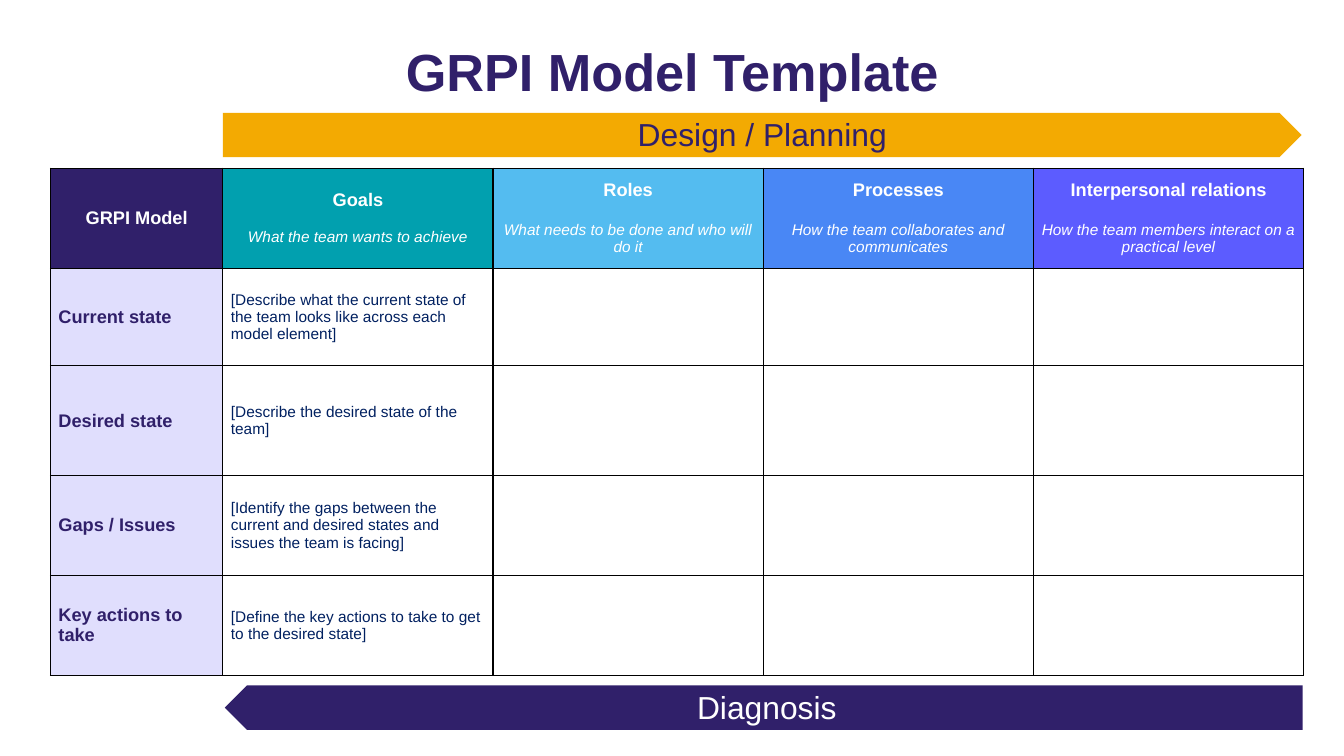
from lxml import etree
from pptx import Presentation
from pptx.dml.color import RGBColor
from pptx.enum import shapes, text
from pptx.oxml import ns
from pptx.util import Pt

PX = 9144  # 100 px to the inch
FONT = "Arial"
INDIGO = RGBColor(0x30, 0x20, 0x6A)
TEAL = RGBColor(0x01, 0xA0, 0xAF)
SKY = RGBColor(0x54, 0xBC, 0xF0)
BLUE = RGBColor(0x49, 0x87, 0xF5)
VIOLET = RGBColor(0x5C, 0x5C, 0xFF)
LAVENDER = RGBColor(0xE0, 0xDE, 0xFD)
NAVY = RGBColor(0x00, 0x20, 0x60)
AMBER = RGBColor(0xF3, 0xAA, 0x02)
WHITE = RGBColor(0xFF, 0xFF, 0xFF)

LABEL_WIDTH, ELEMENT_WIDTH = 171, 268
ROW_HEIGHTS = [99, 97, 109, 99, 99]
# name, question, fill, points between the two
ELEMENTS = [
    ("Goals", "What the team wants to achieve", TEAL, 13),
    ("Roles", "What needs to be done and who will do it", SKY, 15),
    ("Processes", "How the team collaborates and communicates", BLUE, 15),
    ("Interpersonal relations",
     "How the team members interact on a practical level", VIOLET, 15),
]
STAGES = [
    ("Current state", "[Describe what the current state of the team looks "
     "like across each model element]"),
    ("Desired state", "[Describe the desired state of the team]"),
    ("Gaps / Issues", "[Identify the gaps between the current and desired "
     "states and issues the team is facing]"),
    ("Key actions to take",
     "[Define the key actions to take to get to the desired state]"),
]


def px(*lengths):
    return [length * PX for length in lengths]


def write(para, words, size, color, bold=False, italic=False,
          align=text.PP_ALIGN.CENTER, before=0):
    para.alignment = align
    para.space_before = Pt(before)
    span = para.add_run()
    span.text = words
    font = span.font
    font.name, font.size, font.bold, font.italic = FONT, Pt(size), bold, italic
    font.color.rgb = color


def prepare_frame(frame):
    frame.word_wrap = True
    frame.auto_size = text.MSO_AUTO_SIZE.NONE
    frame.vertical_anchor = text.MSO_ANCHOR.MIDDLE
    frame.margin_left = frame.margin_right = 13 * PX
    frame.margin_top = frame.margin_bottom = 13 * PX


def add_title(page, left, top, width, height):
    title = page.shapes.title
    title.left, title.top, title.width, title.height = px(left, top, width, height)
    prepare_frame(title.text_frame)
    write(title.text_frame.paragraphs[0], "GRPI Model Template", 37.3, INDIGO, bold=True)


def add_banner(page, words, fill, color, left, top, width, height,
               rotation=0, shift=0):
    """Arrow bar with an upright caption, whose centre is moved by shift."""
    bar = page.shapes.add_shape(shapes.MSO_SHAPE.PENTAGON,
                                *px(left, top, width, height))
    bar.rotation = rotation
    bar.shadow.inherit = False
    bar.fill.solid()
    bar.fill.fore_color.rgb = fill
    bar.line.fill.background()
    caption = page.shapes.add_textbox(*px(left + shift, top - 1, width, height))
    prepare_frame(caption.text_frame)
    write(caption.text_frame.paragraphs[0], words, 22.7, color)


def add_borders(cell):
    properties = cell._tc.get_or_add_tcPr()
    for index, side in enumerate(("lnL", "lnR", "lnT", "lnB")):
        line = etree.Element(ns.qn(f"a:{side}"), w=str(Pt(1)))
        fill = etree.SubElement(line, ns.qn("a:solidFill"))
        etree.SubElement(fill, ns.qn("a:srgbClr"), val="000000")
        properties.insert(index, line)


def paint(cell, color):
    cell.fill.solid()
    cell.fill.fore_color.rgb = color


def add_matrix(page, left, top):
    widths = [LABEL_WIDTH] + [ELEMENT_WIDTH] * len(ELEMENTS)
    table = page.shapes.add_table(
        len(ROW_HEIGHTS), len(widths),
        *px(left, top, sum(widths), sum(ROW_HEIGHTS))).table
    table.first_row = table.horz_banding = False
    for column, width in zip(table.columns, widths):
        column.width = width * PX
    for row, height in zip(table.rows, ROW_HEIGHTS):
        row.height = height * PX
    for cell in table.iter_cells():
        cell.vertical_anchor = text.MSO_ANCHOR.MIDDLE
        cell.margin_left = cell.margin_right = 8 * PX
        cell.margin_top = cell.margin_bottom = 4 * PX
        cell.fill.background()
        add_borders(cell)

    corner = table.cell(0, 0)
    paint(corner, INDIGO)
    write(corner.text_frame.paragraphs[0], "GRPI Model", 13, WHITE, bold=True)
    for column, (name, question, color, gap) in enumerate(ELEMENTS, 1):
        cell = table.cell(0, column)
        paint(cell, color)
        write(cell.text_frame.paragraphs[0], name, 13, WHITE, bold=True)
        write(cell.text_frame.add_paragraph(), question, 11, WHITE,
              italic=True, before=gap)
    for row, (stage, prompt) in enumerate(STAGES, 1):
        label, answer = table.cell(row, 0), table.cell(row, 1)
        paint(label, LAVENDER)
        write(label.text_frame.paragraphs[0], stage, 13, INDIGO, bold=True,
              align=text.PP_ALIGN.LEFT)
        write(answer.text_frame.paragraphs[0], prompt, 11, NAVY,
              align=text.PP_ALIGN.LEFT)


def main():
    deck = Presentation()
    deck.slide_width, deck.slide_height = px(1333, 750)
    page = deck.slides.add_slide(deck.slide_layouts[5])
    add_matrix(page, 50, 167)
    add_title(page, 104, 35, 1126, 70)
    add_banner(page, "Design / Planning", AMBER, INDIGO, 221, 112, 1070, 44)
    add_banner(page, "Diagnosis", INDIGO, WHITE, 223, 680, 1069, 44,
               rotation=180, shift=3)
    deck.save("out.pptx")


if __name__ == "__main__":
    main()
